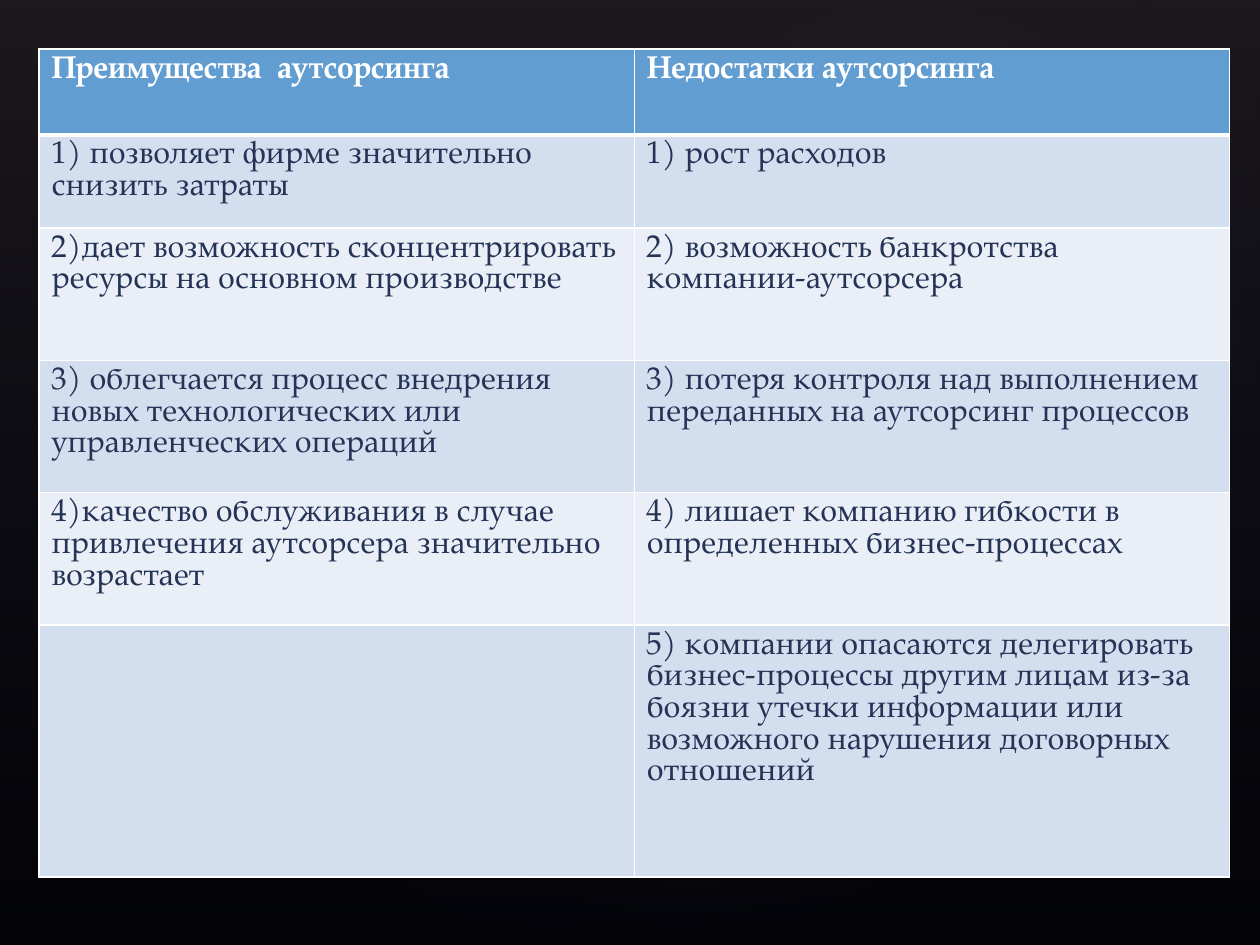
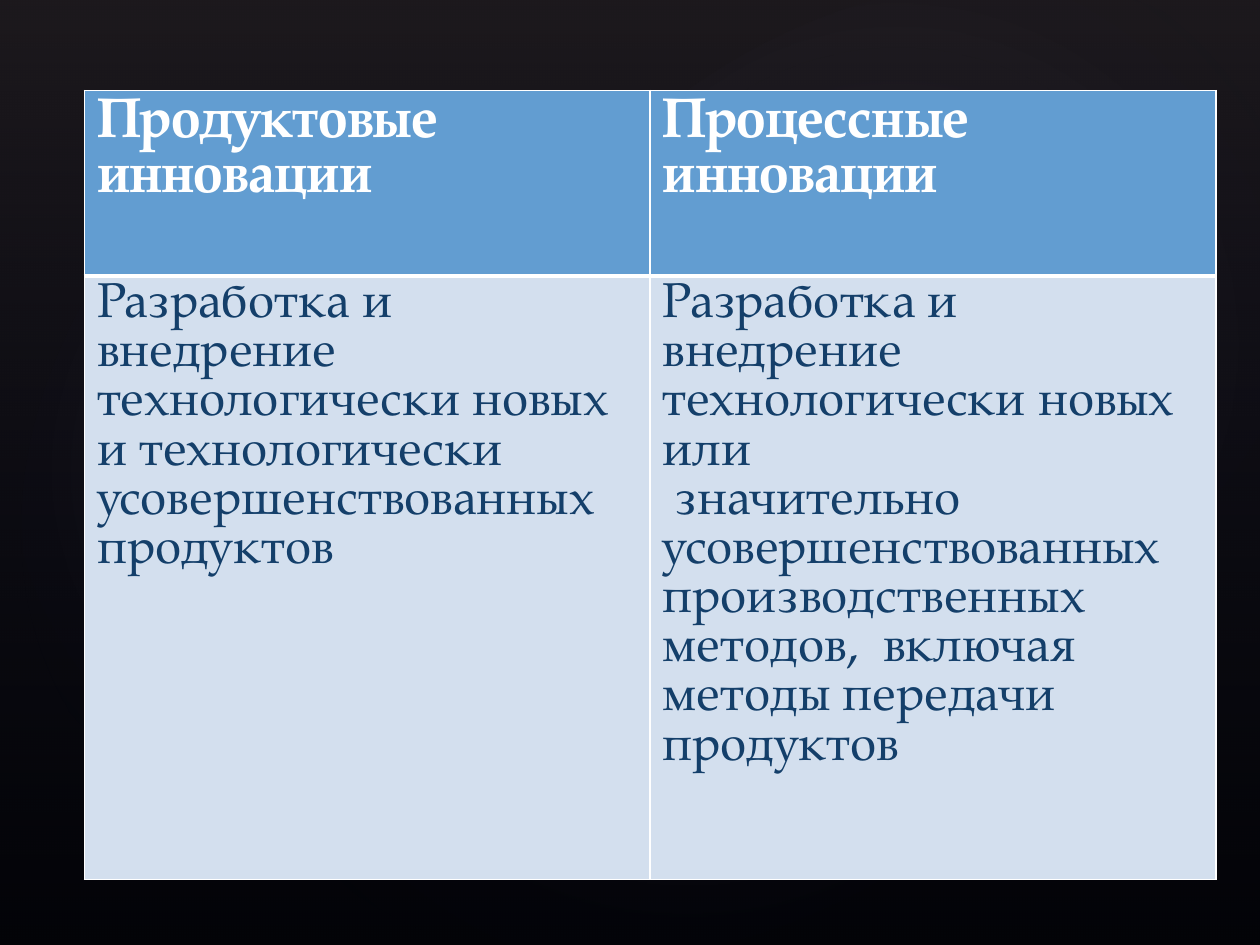
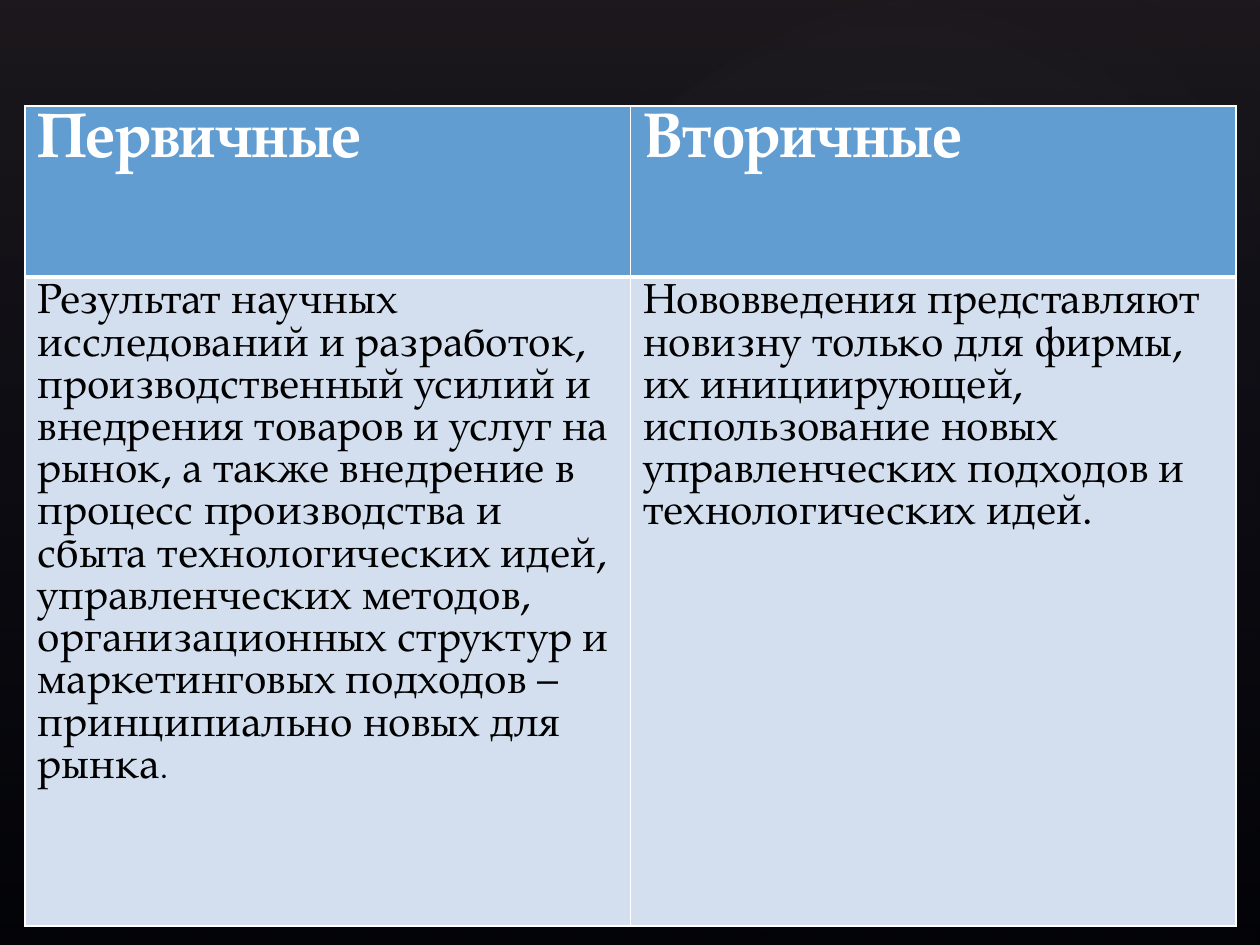
from lxml.etree import SubElement
from pptx import Presentation
from pptx.dml.color import RGBColor
from pptx.enum.shapes import MSO_SHAPE
from pptx.oxml.ns import qn
from pptx.util import Inches, Pt

COLORS = {
    "background": "000000",
    "plum": "504652",
    "navy": "242852",
    "glow": "C4BCC6",
    "header": "629DD1",
    "band_dark": "D3DFEE",
    "band_light": "EAEFF7",
    "white": "FFFFFF",
    "ink": "253356",
    "blue_ink": "143F6A",
    "black": "000000",
}
FONT = "TeX Gyre Pagella"

presentation = Presentation()
presentation.slide_width = Inches(10)
presentation.slide_height = Inches(7.5)

# The slide is a grid of 100 columns and 100 rows
COLUMN = presentation.slide_width / 100
ROW = presentation.slide_height / 100


def set_gradient(shape, stops, circular):
    """Fill with (position %, colour, opacity %) stops."""
    shape.fill.gradient()
    gradient = shape.element.spPr.find(qn("a:gradFill"))
    for child in list(gradient):
        gradient.remove(child)
    stop_list = SubElement(gradient, qn("a:gsLst"))
    for position, color, opacity in stops:
        stop = SubElement(stop_list, qn("a:gs"), pos=str(position * 1000))
        rgb = SubElement(stop, qn("a:srgbClr"), val=COLORS[color])
        SubElement(rgb, qn("a:alpha"), val=str(opacity * 1000))
    if circular:
        direction = SubElement(gradient, qn("a:path"))
        direction.set("path", "circle")
        SubElement(direction, qn("a:fillToRect"), l="50000", t="50000", r="50000", b="50000")
    else:
        SubElement(gradient, qn("a:lin"), ang="5400000", scaled="0")


def add_run(paragraph, text, size, color, bold):
    run = paragraph.add_run()
    run.text = text
    run.font.name = FONT
    run.font.size = Pt(size)
    run.font.bold = bold
    run.font.color.rgb = RGBColor.from_string(COLORS[color])


# Shared backdrop: left, top, width, height in grid units, rotation, stops
backdrop = [
    (MSO_SHAPE.RECTANGLE, 0, 0, 100, 100, 0, [(0, "plum", 36), (100, "navy", 10)]),
    (MSO_SHAPE.OVAL, 15, 15.2, 79.2, 83.2, 328.7, [(0, "glow", 7), (58, "navy", 0)]),
    (MSO_SHAPE.OVAL, -3, 17.07, 60.6, 65.33, 294.3, [(0, "glow", 8), (58, "navy", 0)]),
    (MSO_SHAPE.OVAL, 35.8, 1.73, 70.9, 69.33, 328.7, [(0, "glow", 8), (58, "navy", 0)]),
]

# Tables: place and row heights in grid units, text sizes, cell texts by row
tables = [
    {
        "left": 3.1, "top": 5.2, "width": 94.5,
        "heights": [9.07, 9.87, 14, 14, 14, 26.67],
        "header_size": 18, "body_size": 18, "body_color": "ink",
        "rows": [
            ["Преимущества  аутсорсинга", "Недостатки аутсорсинга"],
            ["1) позволяет фирме значительно снизить затраты", "1) рост расходов"],
            ["2)дает возможность сконцентрировать ресурсы на основном производстве",
             "2) возможность банкротства компании-аутсорсера"],
            ["3) облегчается процесс внедрения новых технологических или "
             "управленческих операций",
             "3) потеря контроля над выполнением переданных на аутсорсинг процессов"],
            ["4)качество обслуживания в случае привлечения аутсорсера "
             "значительно возрастает",
             "4) лишает компанию гибкости в определенных бизнес-процессах"],
            ["",
             "5) компании опасаются делегировать бизнес-процессы другим лицам "
             "из-за боязни утечки информации или возможного нарушения "
             "договорных отношений"],
        ],
    },
    {
        "left": 6.7, "top": 9.6, "width": 89.8,
        "heights": [19.6, 63.87],
        "header_size": 32, "body_size": 28, "body_color": "blue_ink",
        "rows": [
            ["Продуктовые инновации", "Процессные инновации"],
            ["Разработка и внедрение  технологически новых и технологически "
             "усовершенствованных продуктов",
             "Разработка и внедрение технологически новых или\n"
             " значительно усовершенствованных производственных методов,  "
             "включая методы передачи продуктов"],
        ],
    },
    {
        "left": 2, "top": 11.2, "width": 96.1,
        "heights": [18.13, 68.67],
        "header_size": 36, "body_size": 24, "body_color": "black",
        "rows": [
            ["Первичные", "Вторичные"],
            ["Результат научных исследований и разработок, производственный "
             "усилий и внедрения товаров и услуг на рынок, а также внедрение в "
             "процесс производства и сбыта технологических идей, управленческих "
             "методов, организационных структур и маркетинговых подходов – "
             "принципиально новых для рынка",
             "Нововведения представляют  новизну только для фирмы, их "
             "инициирующей, использование новых управленческих подходов и "
             "технологических идей."],
        ],
    },
]

# Prepare the blank layout
layout = presentation.slide_layouts[6]
for placeholder in list(layout.placeholders):
    placeholder.element.getparent().remove(placeholder.element)
layout.background.fill.solid()
layout.background.fill.fore_color.rgb = RGBColor.from_string(COLORS["background"])

slides = [presentation.slides.add_slide(layout) for _ in tables]

# Draw the backdrop once and move it to the layout
for number, (kind, left, top, width, height, rotation, stops) in enumerate(backdrop, 2):
    shape = slides[0].shapes.add_shape(
        kind, int(left * COLUMN), int(top * ROW), int(width * COLUMN), int(height * ROW))
    shape.rotation = rotation
    shape.shadow.inherit = False
    shape.line.fill.background()
    set_gradient(shape, stops, kind == MSO_SHAPE.OVAL)
    shape.element.nvSpPr.cNvPr.set("id", str(number))
    layout.element.cSld.spTree.append(shape.element)

# Fill each slide with its table
for slide, content in zip(slides, tables):
    rows = content["rows"]
    table = slide.shapes.add_table(
        len(rows), 2, int(content["left"] * COLUMN), int(content["top"] * ROW),
        int(content["width"] * COLUMN), int(sum(content["heights"]) * ROW)).table
    for row, height in zip(table.rows, content["heights"]):
        row.height = int(height * ROW)

    for row_index, texts in enumerate(rows):
        is_header = row_index == 0
        if is_header:
            fill, size, color = "header", content["header_size"], "white"
        else:
            fill = "band_dark" if row_index % 2 else "band_light"
            size, color = content["body_size"], content["body_color"]
        for column_index, text in enumerate(texts):
            cell = table.cell(row_index, column_index)

            # White borders, thicker under the header
            properties = cell._tc.get_or_add_tcPr()
            for side in ("L", "R", "T", "B"):
                points = 3 if is_header and side == "B" else 1
                line = SubElement(properties, qn(f"a:ln{side}"), w=str(Pt(points)))
                line_fill = SubElement(line, qn("a:solidFill"))
                SubElement(line_fill, qn("a:srgbClr"), val=COLORS["white"])
            cell.fill.solid()
            cell.fill.fore_color.rgb = RGBColor.from_string(COLORS[fill])

            for index, line_text in enumerate(text.split("\n") if text else []):
                frame = cell.text_frame
                paragraph = frame.add_paragraph() if index else frame.paragraphs[0]
                add_run(paragraph, line_text, size, color, is_header)

# The closing full stop of the last definition is smaller
primary_definition = table.cell(1, 0).text_frame.paragraphs[0]
add_run(primary_definition, ".", 18, "black", False)

presentation.save("out.pptx")
